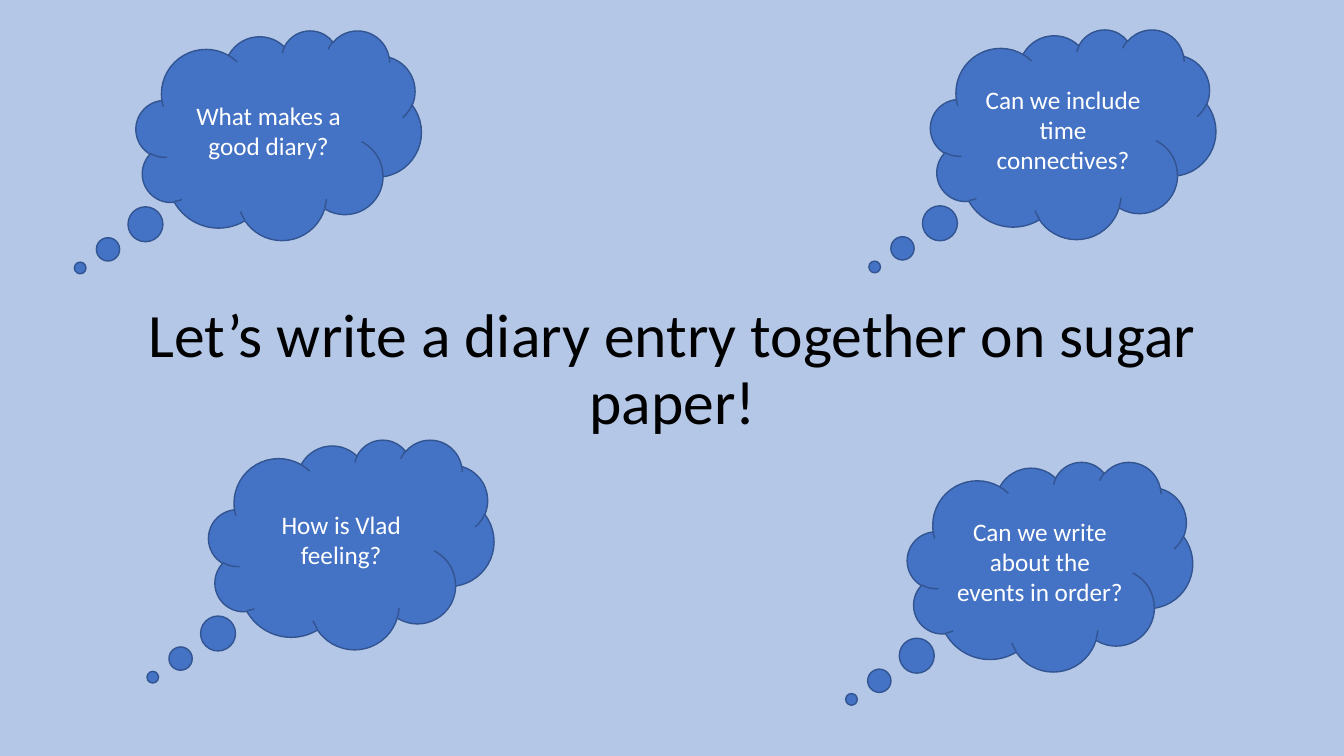
from dataclasses import dataclass

from pptx import Presentation
from pptx.dml.color import RGBColor
from pptx.enum.shapes import MSO_SHAPE
from pptx.enum.text import MSO_ANCHOR, MSO_AUTO_SIZE, PP_ALIGN
from pptx.slide import Slide
from pptx.text.text import TextFrame
from pptx.util import Emu, Pt

CLOUD = MSO_SHAPE.CLOUD_CALLOUT
MIDDLE = MSO_ANCHOR.MIDDLE
CENTER = PP_ALIGN.CENTER
FIXED = MSO_AUTO_SIZE.NONE

FONT = "Calibri"
WIDTH, HEIGHT = 283, 208
TAIL = (-0.696, 0.634)


@dataclass(frozen=True)
class Cloud:
    left: int
    top: int
    text: str


CLOUDS = [
    Cloud(135, 30, "What makes a good diary?"),
    Cloud(923, 29, "Can we include time connectives?"),
    Cloud(207, 436, "How is Vlad feeling?"),
    Cloud(900, 458, "Can we write about the events in order?"),
]


def px(count: int) -> Emu:
    return Emu(count * 9144)


def color(code: str) -> RGBColor:
    return RGBColor.from_string(code)


def write(frame: TextFrame, text: str, size: int, code: str) -> None:
    frame.text = text
    frame.word_wrap = True
    frame.auto_size = FIXED
    frame.vertical_anchor = MIDDLE
    line = frame.paragraphs[0]
    line.alignment = CENTER
    font = line.runs[0].font
    font.name = FONT
    font.size = Pt(size)
    font.color.rgb = color(code)


def add_title(slide: Slide, text: str) -> None:
    title = slide.shapes.title
    title.left, title.top = px(92), px(219)
    title.width, title.height = px(1150), px(298)
    write(title.text_frame, text, 44, "000000")
    title.text_frame.paragraphs[0].line_spacing = 0.9


def add_cloud(slide: Slide, cloud: Cloud) -> None:
    shape = slide.shapes.add_shape(
        CLOUD, px(cloud.left), px(cloud.top), px(WIDTH), px(HEIGHT)
    )
    for index, value in enumerate(TAIL):
        shape.adjustments[index] = value
    shape.shadow.inherit = False
    shape.fill.solid()
    shape.fill.fore_color.rgb = color("4472C4")
    shape.line.color.rgb = color("325491")
    shape.line.width = Pt(1)
    write(shape.text_frame, cloud.text, 18, "FFFFFF")


def main() -> None:
    deck = Presentation()
    deck.slide_width, deck.slide_height = px(1333), px(750)
    slide = deck.slides.add_slide(deck.slide_layouts.get_by_name("Title Only"))
    back = slide.background.fill
    back.solid()
    back.fore_color.rgb = color("B4C7E7")
    add_title(slide, "Let’s write a diary entry together on sugar paper!")
    for cloud in CLOUDS:
        add_cloud(slide, cloud)
    deck.save("out.pptx")


if __name__ == "__main__":
    main()
